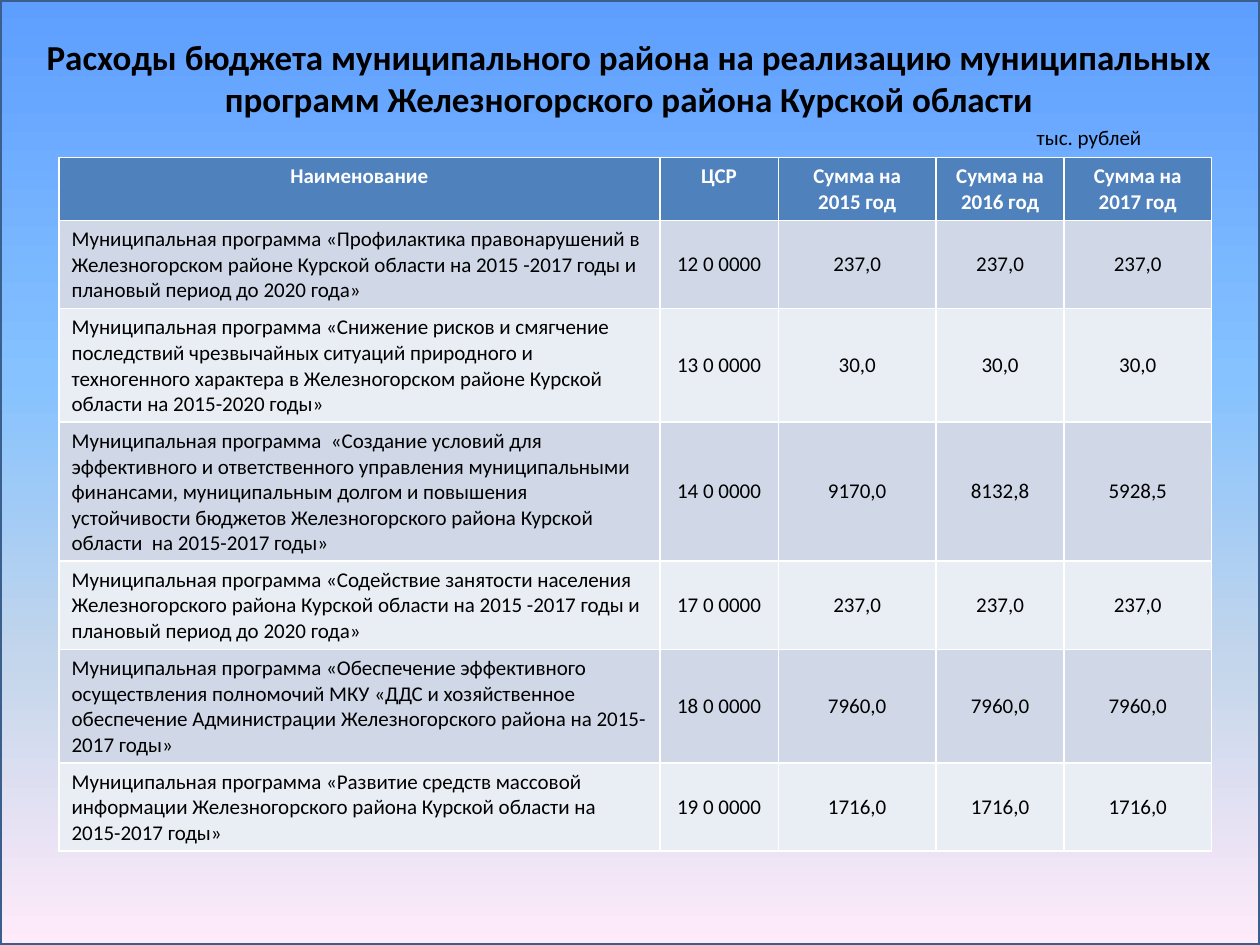
from copy import deepcopy

from pptx import Presentation
from pptx.dml.color import RGBColor
from pptx.enum.shapes import MSO_SHAPE
from pptx.enum.text import MSO_ANCHOR as Anchor, MSO_AUTO_SIZE as AutoSize, PP_ALIGN as Align
from pptx.oxml.ns import qn
from pptx.util import Cm, Pt

BLACK = RGBColor(0x00, 0x00, 0x00)
WHITE = RGBColor(0xFF, 0xFF, 0xFF)
FRAME_LINE = RGBColor(0x3A, 0x5F, 0x8C)
HEADER_FILL = RGBColor(0x4F, 0x81, 0xBD)
BAND_FILLS = [RGBColor(0xD0, 0xD8, 0xE8), RGBColor(0xE9, 0xED, 0xF4)]
SKY_STOPS = [
    (0, RGBColor(0x5E, 0x9E, 0xFF)),
    (0.4, RGBColor(0x85, 0xC2, 0xFF)),
    (0.7, RGBColor(0xC4, 0xD6, 0xEB)),
    (1, RGBColor(0xFF, 0xEB, 0xFA)),
]

FONT = "Calibri"
SLIDE_WIDTH, SLIDE_HEIGHT = Cm(25.4), Cm(19.05)
TITLE = "Расходы бюджета муниципального района на реализацию муниципальных программ Железногорского района Курской области"
UNIT = "тыс. рублей"
HEADERS = ["Наименование", "ЦСР", "Сумма на 2015 год", "Сумма на 2016 год", "Сумма на 2017 год"]
PROGRAMS = [
    ["Муниципальная программа «Профилактика правонарушений в Железногорском районе Курской области на 2015 -2017 годы и плановый период до 2020 года»",
     "12 0 0000", "237,0", "237,0", "237,0"],
    ["Муниципальная программа «Снижение рисков и смягчение последствий чрезвычайных ситуаций природного и техногенного характера в Железногорском районе Курской области на 2015-2020 годы»",
     "13 0 0000", "30,0", "30,0", "30,0"],
    ["Муниципальная программа  «Создание условий для эффективного и ответственного управления муниципальными финансами, муниципальным долгом и повышения устойчивости бюджетов Железногорского района Курской области  на 2015-2017 годы»",
     "14 0 0000", "9170,0", "8132,8", "5928,5"],
    ["Муниципальная программа «Содействие занятости населения  Железногорского района Курской области на 2015 -2017 годы и плановый период до 2020 года»",
     "17 0 0000", "237,0", "237,0", "237,0"],
    ["Муниципальная программа «Обеспечение эффективного осуществления полномочий МКУ «ДДС и хозяйственное обеспечение Администрации Железногорского района на 2015-2017 годы»",
     "18 0 0000", "7960,0", "7960,0", "7960,0"],
    ["Муниципальная программа «Развитие средств массовой информации Железногорского района Курской области на 2015-2017 годы»",
     "19 0 0000", "1716,0", "1716,0", "1716,0"],
]
COLUMN_WIDTHS = [12.11, 2.39, 3.18, 2.58, 2.97]
ROW_LINES = [2, 3, 4, 5, 3, 4, 3]
ROW_PADDING, LINE_HEIGHT = 0.25, 0.51


def set_text(text_frame, text, size, color=BLACK, bold=False, align=Align.LEFT):
    text_frame.text = text
    paragraph = text_frame.paragraphs[0]
    paragraph.alignment = align
    for run in paragraph.runs:
        font = run.font
        font.name, font.size, font.bold = FONT, Pt(size), bold
        font.color.rgb = color


def add_background(slide, left, top, width, height):
    shape = slide.shapes.add_shape(MSO_SHAPE.RECTANGLE, left, top, width, height)
    shape.shadow.inherit = False
    shape.line.color.rgb = FRAME_LINE
    shape.line.width = Pt(2)
    shape.fill.gradient()
    shape.fill.gradient_angle = 270
    stop_list = shape.element.spPr.find(".//" + qn("a:gsLst"))
    for _ in range(len(SKY_STOPS) - len(stop_list)):
        stop_list.append(deepcopy(stop_list[0]))
    for stop, (position, color) in zip(shape.fill.gradient_stops, SKY_STOPS):
        stop.position = position
        stop.color.rgb = color
    slide.shapes.title.element.addprevious(shape.element)


def place_title(slide, left, top, width, height):
    title = slide.shapes.title
    title.left, title.top, title.width, title.height = left, top, width, height
    title.text_frame.vertical_anchor = Anchor.TOP
    title.text_frame.auto_size = AutoSize.SHAPE_TO_FIT_TEXT
    set_text(title.text_frame, TITLE, 20, bold=True, align=Align.CENTER)


def add_unit(slide, left, top, width, height):
    text_frame = slide.shapes.add_textbox(left, top, width, height).text_frame
    text_frame.word_wrap = True
    text_frame.auto_size = AutoSize.SHAPE_TO_FIT_TEXT
    set_text(text_frame, UNIT, 12)


def add_program_table(slide, left, top, width, height):
    rows = [HEADERS] + PROGRAMS
    table = slide.shapes.add_table(len(rows), len(HEADERS), left, top, width, height).table
    for column, column_width in zip(table.columns, COLUMN_WIDTHS):
        column.width = Cm(column_width)
    for row_index, (row, values) in enumerate(zip(table.rows, rows)):
        is_header = row_index == 0
        row.height = Cm(ROW_PADDING + LINE_HEIGHT * ROW_LINES[row_index])
        for column_index, (cell, value) in enumerate(zip(row.cells, values)):
            is_name = column_index == 0 and not is_header
            cell.fill.solid()
            cell.fill.fore_color.rgb = HEADER_FILL if is_header else BAND_FILLS[(row_index - 1) % 2]
            cell.vertical_anchor = Anchor.TOP if is_header else Anchor.MIDDLE
            set_text(cell.text_frame, value, 12, WHITE if is_header else BLACK, is_header,
                     Align.LEFT if is_name else Align.CENTER)


def main():
    presentation = Presentation()
    presentation.slide_width, presentation.slide_height = SLIDE_WIDTH, SLIDE_HEIGHT
    slide = presentation.slides.add_slide(presentation.slide_layouts[5])
    add_background(slide, 0, 0, SLIDE_WIDTH, SLIDE_HEIGHT)
    place_title(slide, Cm(0.58), Cm(0.58), Cm(24.2), Cm(1.96))
    add_unit(slide, Cm(20.65), Cm(2.39), Cm(2.97), Cm(0.76))
    add_program_table(slide, Cm(1.19), Cm(3.17), Cm(23.23), Cm(13.97))
    presentation.save("out.pptx")


if __name__ == "__main__":
    main()
